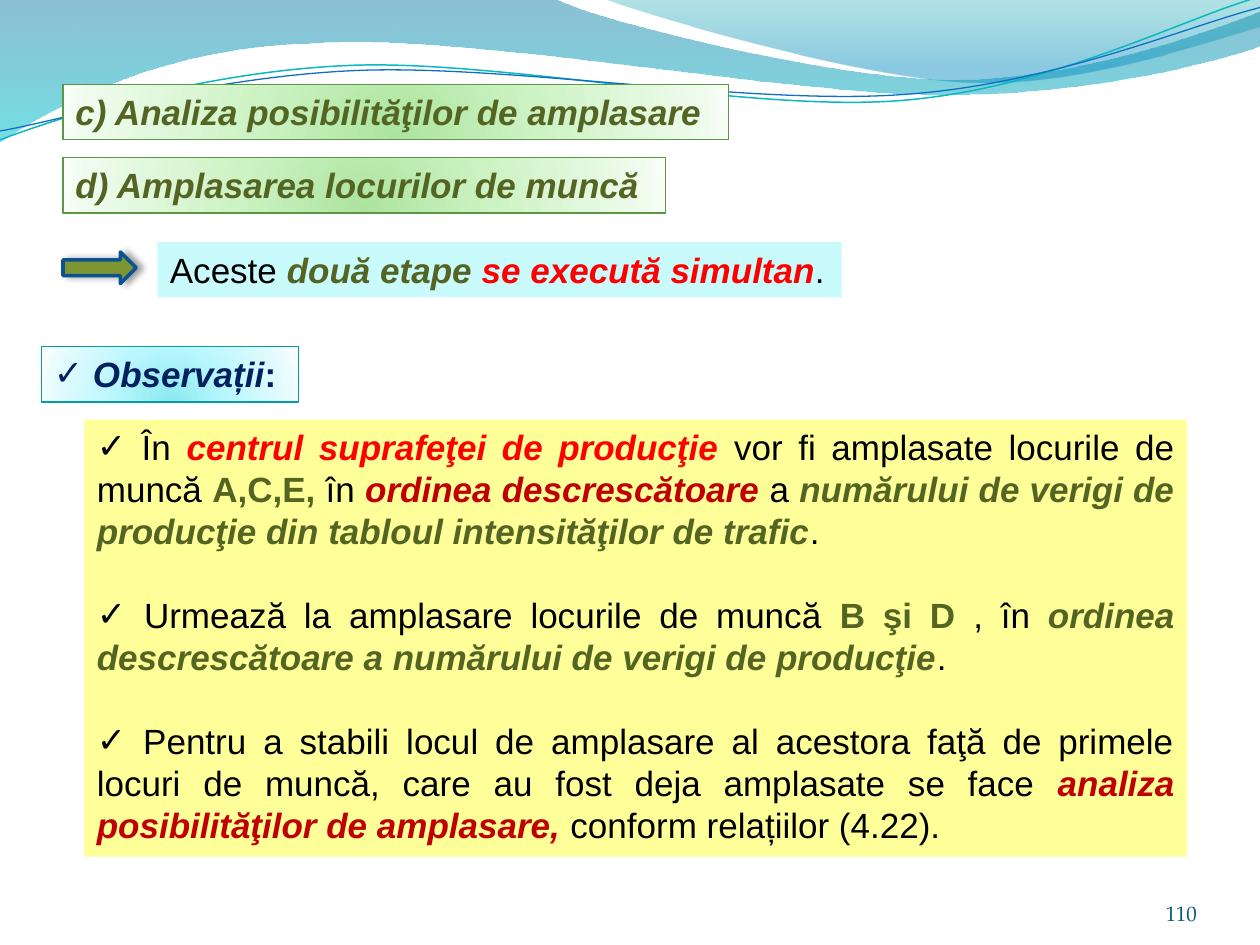
from pptx import Presentation
from pptx.dml.color import RGBColor as RGB
from pptx.enum.shapes import MSO_SHAPE as Shape
from pptx.enum.text import MSO_ANCHOR as Anchor, PP_ALIGN as Align
from pptx.oxml import parse_xml
from pptx.oxml.ns import nsdecls, qn
from pptx.util import Inches, Pt

HEX = {
    "black": "000000", "olive": "546422", "red": "FF0000", "wine": "C00000",
    "navy": "002060", "teal": "045D75", "aqua": "C9FAFC", "yellow": "FFFF99",
    "arrow": "7E9632", "edge": "0B5292", "green": "5B9747", "cyan": "069CA3",
    "wave1": "0AB8BF", "wave2": "0F6FC6",
}
LEAF = [(0, "ACE49F", 100), (43, "CDF3C4", 100), (93, "EFFBED", 100), (100, "F9FFF8", 100)]
ICE = [(0, "8BE9F1", 100), (43, "B9F7FD", 100), (93, "EAFCFE", 100), (100, "F8FEFF", 100)]
LINEAR = '<a:lin ang="5400000" scaled="0"/>'
RADIAL = ('<a:path path="circle"><a:fillToRect l="50000" t="130000" '
          'r="50000" b="-30000"/></a:path>')


def shade(shape, stops, way):
    shape.fill.background()
    marks = "".join(
        f'<a:gs pos="{pos * 1000}"><a:srgbClr val="{tone}">'
        f'<a:alpha val="{alpha * 1000}"/></a:srgbClr></a:gs>'
        for pos, tone, alpha in stops)
    props = shape._element.spPr
    grad = parse_xml(f'<a:gradFill {nsdecls("a")} rotWithShape="1">'
                     f'<a:gsLst>{marks}</a:gsLst>{way}</a:gradFill>')
    props.replace(props.find(qn("a:noFill")), grad)


def write(shape, paras, font="Arial", size=20, align=Align.LEFT, bullet=False,
          anchor=Anchor.TOP, inset=(0.1, 0.05), lead=24):
    frame = shape.text_frame
    frame.word_wrap = True
    frame.vertical_anchor = anchor
    frame.margin_left = frame.margin_right = Inches(inset[0])
    frame.margin_top = frame.margin_bottom = Inches(inset[1])
    for i, runs in enumerate(paras):
        para = frame.add_paragraph() if i else frame.paragraphs[0]
        para.alignment = align
        para.line_spacing = Pt(lead)
        para.space_before = Pt(lead if i else 0)
        if bullet:
            props = para._p.get_or_add_pPr()
            props.set("marL", "0")
            props.set("indent", "0")
            props.append(parse_xml(f'<a:buFont {nsdecls("a")} typeface="Arial"/>'))
            props.append(parse_xml(f'<a:buChar {nsdecls("a")} char="✓"/>'))
        for text, tone, style in runs:
            run = para.add_run()
            run.text = text
            run.font.name = font
            run.font.size = Pt(size)
            run.font.bold = "b" in style
            run.font.italic = "i" in style
            run.font.color.rgb = RGB.from_string(HEX[tone])


prs = Presentation()
prs.slide_width, prs.slide_height = Inches(10), Inches(7.5)
slide = prs.slides.add_slide(prs.slide_layouts[6])
shapes = slide.shapes

waves = [
    ([(0, 0), (4.4, -0.01), (4.76, 0.17, 6.64, 0.63, 7.58, 0.63),
      (8.53, 0.63, 9.58, 0.26, 10, 0.09), (10.01, 0.36),
      (9.83, 0.44, 8.7, 0.76, 7.46, 0.75), (6.22, 0.75, 3.82, 0.28, 2.57, 0.34),
      (1.29, 0.36, 0.46, 0.83, -0.01, 1.13)],
     [(0, "0074A1", 45), (100, "00C6CF", 55)], None, 0),
    ([(4.79, -0.01), (5.09, 0.11, 6.82, 0.62, 7.69, 0.65),
      (8.56, 0.69, 9.61, 0.32, 10, 0.21), (10, 0)],
     [(0, "00A1A9", 30), (80, "008BBF", 45)], None, 0),
    ([(0, 1.11), (0.48, 0.93, 1.58, 0.57, 2.77, 0.52),
      (3.95, 0.47, 5.93, 0.89, 7.13, 0.8), (8.33, 0.71, 9.38, 0.15, 9.98, -0.02)],
     None, "wave1", 0.85),
    ([(0, 1.04), (0.47, 0.96, 1.64, 0.61, 2.83, 0.56),
      (4.03, 0.51, 5.97, 0.84, 7.17, 0.75), (8.36, 0.67, 9.41, 0.21, 10, 0.06)],
     None, "wave2", 0.75),
]
unit = 1000
for parts, stops, tone, width in waves:
    grid = [[round(v * unit) for v in part] for part in parts]
    ends = [part[-2:] for part in grid]
    pen = shapes.build_freeform(*ends[0], scale=Inches(1) / unit)
    pen.add_line_segments(ends[1:], close=bool(stops))
    wave = pen.convert_to_shape()
    left, top = (min(axis) for axis in zip(*ends))
    lines = list(wave._element.iter(qn("a:lnTo")))
    for line, part in zip(lines, grid[1:]):
        if len(part) == 6:
            dots = "".join(f'<a:pt x="{x - left}" y="{y - top}"/>'
                           for x, y in zip(part[::2], part[1::2]))
            line.getparent().replace(line, parse_xml(
                f'<a:cubicBezTo {nsdecls("a")}>{dots}</a:cubicBezTo>'))
    wave.shadow.inherit = False
    if stops:
        shade(wave, stops, LINEAR)
        wave.line.fill.background()
    else:
        wave.fill.background()
        wave.line.color.rgb = RGB.from_string(HEX[tone])
        wave.line.width = Pt(width)

number = shapes.add_textbox(Inches(8.67), Inches(6.95), Inches(0.83), Inches(0.4))
write(number, [[("110", "teal", "")]], font="TeX Gyre Pagella", size=12,
      align=Align.RIGHT, anchor=Anchor.BOTTOM, inset=(0, 0), lead=16)

notes = [
    [(" În ", "black", ""), ("centrul suprafeţei de producţie ", "red", "bi"),
     ("vor fi amplasate locurile de muncă ", "black", ""), ("A,C,E,", "olive", "b"),
     (" în ", "black", ""), ("ordinea descrescătoare ", "wine", "bi"), ("a ", "black", ""),
     ("numărului de verigi de producţie din tabloul intensităţilor de trafic", "olive", "bi"),
     (".", "black", "")],
    [(" Urmează la amplasare locurile de muncă ", "black", ""), ("B şi D ", "olive", "b"),
     (", în ", "black", ""),
     ("ordinea descrescătoare a numărului de verigi de producţie", "olive", "bi"),
     (".", "black", "")],
    [(" Pentru a stabili locul de amplasare al acestora faţă de primele locuri de muncă, "
      "care au fost deja amplasate se face ", "black", ""),
     ("analiza posibilităţilor de amplasare, ", "wine", "bi"),
     ("conform relațiilor (4.22).", "black", "")],
]
simul = [[("Aceste ", "black", ""), ("două etape ", "olive", "bi"),
          ("se execută simultan", "red", "bi"), (".", "black", "")]]
boxes = [
    (Shape.RECTANGLE, (0.5, 0.67, 5.28, 0.44), LEAF, ("green", 0.75),
     [[("c) Analiza posibilităţilor de amplasare", "olive", "bi")]], {}),
    (Shape.RECTANGLE, (0.5, 1.25, 4.78, 0.44), LEAF, ("green", 0.75),
     [[("d) Amplasarea locurilor de muncă", "olive", "bi")]], {}),
    (Shape.RECTANGLE, (1.25, 1.92, 5.43, 0.44), "aqua", None,
     simul, {"align": Align.JUSTIFY}),
    (Shape.RIGHT_ARROW, (0.5, 2, 0.58, 0.25), "arrow", ("edge", 2), [], {}),
    (Shape.RECTANGLE, (0.33, 2.75, 2.04, 0.44), ICE, ("cyan", 0.75),
     [[(" Observații", "navy", "bi"), (":", "navy", "b")]], {"bullet": True}),
    (Shape.RECTANGLE, (0.67, 3.33, 8.75, 3.47), "yellow", None,
     notes, {"align": Align.JUSTIFY, "bullet": True}),
]
for kind, place, fill, edge, paras, form in boxes:
    box = shapes.add_shape(kind, *map(Inches, place))
    if isinstance(fill, str):
        box.fill.solid()
        box.fill.fore_color.rgb = RGB.from_string(HEX[fill])
    else:
        shade(box, fill, RADIAL)
    if edge:
        box.line.color.rgb = RGB.from_string(HEX[edge[0]])
        box.line.width = Pt(edge[1])
    else:
        box.line.fill.background()
    box.shadow.inherit = False
    if kind == Shape.RIGHT_ARROW:
        box._element.spPr.find(qn("a:effectLst")).append(parse_xml(
            f'<a:outerShdw {nsdecls("a")} blurRad="{Pt(4)}" dist="{Pt(3)}" dir="0" '
            'rotWithShape="0"><a:srgbClr val="000000"><a:alpha val="40000"/>'
            '</a:srgbClr></a:outerShdw>'))
    write(box, paras, **form)

prs.save("out.pptx")
